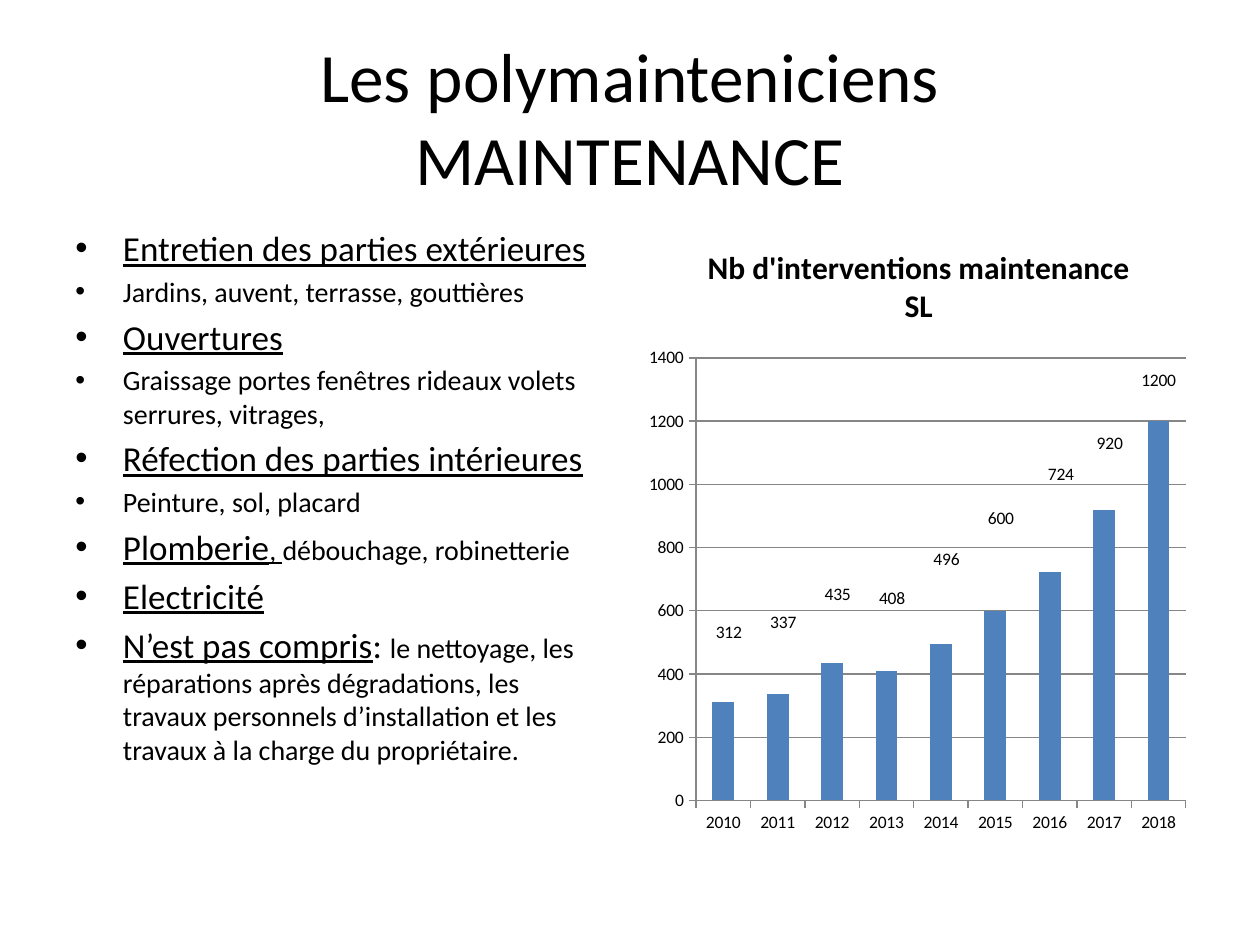
from lxml.etree import SubElement
from pptx import Presentation
from pptx.chart.data import CategoryChartData
from pptx.dml.color import RGBColor
from pptx.enum.chart import XL_CHART_TYPE, XL_TICK_MARK
from pptx.enum.text import MSO_ANCHOR, MSO_AUTO_SIZE, PP_ALIGN
from pptx.oxml import parse_xml
from pptx.oxml.ns import nsdecls, qn
from pptx.util import Cm, Pt

FONT = "Calibri"
BLACK = "000000"
GRID = "868686"
BAR = "4F81BD"
HEADING, DETAIL = 20, 16

TASKS = [
    [("Entretien des parties extérieures", HEADING, True)],
    [("Jardins, auvent, terrasse, gouttières", DETAIL, False)],
    [("Ouvertures", HEADING, True)],
    [("Graissage portes fenêtres rideaux volets serrures, vitrages,", DETAIL, False)],
    [("Réfection des parties intérieures", HEADING, True)],
    [("Peinture, sol, placard", DETAIL, False)],
    [("Plomberie", HEADING, True), (", ", DETAIL, True),
     ("débouchage, robinetterie", DETAIL, False)],
    [("Electricité", HEADING, True)],
    [("N’est pas compris", HEADING, True), (": ", HEADING, False),
     ("le nettoyage, les réparations après dégradations, les travaux personnels "
      "d’installation et les travaux à la charge du propriétaire.", DETAIL, False)],
]

INTERVENTIONS = {
    "2010": 312, "2011": 337, "2012": 435, "2013": 408, "2014": 496,
    "2015": 600, "2016": 724, "2017": 920, "2018": 1200,
}
LABEL_SHIFTS = [
    (0.01, -0.19), (0.01, -0.2), (0.01, -0.22), (0.01, -0.22), (0.01, -0.26),
    (0.01, -0.3), (0.02, -0.34), (0.01, -0.34), (0, -0.37),
]
LABEL_EXTENSION = (
    f'<c:extLst {nsdecls("c")}><c:ext uri="{{CE6537A1-D6FC-4f65-9D91-7224C49458BB}}" '
    'xmlns:c15="http://schemas.microsoft.com/office/drawing/2012/chart">'
    '<c15:showLeaderLines val="0"/></c:ext></c:extLst>'
)


def color(hex_value):
    return RGBColor.from_string(hex_value)


def style(font, size, bold=False, underline=False):
    font.name = FONT
    font.size = Pt(size)
    font.bold = bold
    font.underline = underline
    font.color.rgb = color(BLACK)


def write(paragraph, text, **formats):
    for number, line in enumerate(text.split("\n")):
        if number:
            paragraph.add_line_break()
        run = paragraph.add_run()
        run.text = line
        style(run.font, **formats)


def place(shape, box):
    shape.left, shape.top, shape.width, shape.height = box


def add_heading(slide, box):
    heading = slide.shapes.title
    place(heading, box)
    frame = heading.text_frame
    frame.auto_size = MSO_AUTO_SIZE.NONE
    frame.vertical_anchor = MSO_ANCHOR.MIDDLE
    frame.paragraphs[0].alignment = PP_ALIGN.CENTER
    write(frame.paragraphs[0], "Les polymainteniciens\nMAINTENANCE", size=39.6)


def add_bullet(paragraph):
    properties = paragraph._p.get_or_add_pPr()
    properties.set("marL", str(Cm(0.96)))
    properties.set("indent", str(-Cm(0.96)))
    SubElement(properties, qn("a:buFont"), typeface="Arial")
    SubElement(properties, qn("a:buChar"), char="•")


def add_tasks(slide, box):
    frame = slide.shapes.add_textbox(*box).text_frame
    frame.word_wrap = True
    for number, parts in enumerate(TASKS):
        paragraph = frame.add_paragraph() if number else frame.paragraphs[0]
        add_bullet(paragraph)
        if number:
            paragraph.space_before = Pt(parts[0][1] * 0.2)
        for text, size, underline in parts:
            write(paragraph, text, size=size, underline=underline)


def manual_layout(settings):
    items = "".join(f'<c:{key} val="{value}"/>' for key, value in settings.items())
    return parse_xml(f'<c:layout {nsdecls("c")}><c:manualLayout>{items}'
                     '</c:manualLayout></c:layout>')


def format_axis(axis):
    style(axis.tick_labels.font, 10)
    axis.major_tick_mark = XL_TICK_MARK.OUTSIDE
    axis.minor_tick_mark = XL_TICK_MARK.NONE
    axis.format.line.color.rgb = color(GRID)
    axis.format.line.width = Pt(0.75)


def label_bars(chart, bars):
    bars.data_labels.show_value = True
    for number in range(len(INTERVENTIONS)):
        style(bars.points[number].data_label.font, 10)
    for label, (x, y) in zip(chart.element.iter(qn("c:dLbl")), LABEL_SHIFTS):
        label.insert(1, manual_layout({"x": x, "y": y}))
    labels = next(chart.element.iter(qn("c:dLbls")))
    for leader in labels.findall(qn("c:showLeaderLines")):
        labels.remove(leader)
    SubElement(labels, qn("c:showLeaderLines"), val="0")
    labels.append(parse_xml(LABEL_EXTENSION))


def add_interventions(slide, box):
    name = "Nb d'interventions maintenance SL"
    data = CategoryChartData()
    data.categories = list(INTERVENTIONS)
    data.add_series(name, list(INTERVENTIONS.values()))
    chart = slide.shapes.add_chart(XL_CHART_TYPE.COLUMN_STACKED, *box, data).chart
    style(chart.font, 10)
    chart.has_legend = False
    chart.has_title = True
    caption = chart.chart_title.text_frame.paragraphs[0]
    write(caption, name, size=18, bold=True)

    for axis in (chart.category_axis, chart.value_axis):
        format_axis(axis)
    scale = chart.value_axis
    scale.minimum_scale, scale.maximum_scale, scale.major_unit = 0, 1400, 200
    scale.has_major_gridlines = True
    scale.major_gridlines.format.line.color.rgb = color(GRID)
    scale.major_gridlines.format.line.width = Pt(0.75)

    plot = chart.plots[0]
    plot.vary_by_categories = False
    plot.gap_width, plot.overlap = 150, 100
    bars = plot.series[0]
    bars.format.fill.solid()
    bars.format.fill.fore_color.rgb = color(BAR)
    label_bars(chart, bars)

    area = next(chart.element.iter(qn("c:plotArea")))
    for layout in area.findall(qn("c:layout")):
        area.remove(layout)
    area.insert(0, manual_layout({
        "layoutTarget": "inner", "xMode": "edge", "yMode": "edge",
        "x": 0.1, "y": 0.22, "w": 0.88, "h": 0.71,
    }))


def main():
    presentation = Presentation()
    presentation.slide_width, presentation.slide_height = Cm(25.4), Cm(19.05)
    slide = presentation.slides.add_slide(presentation.slide_layouts[5])
    margin, top, gap, height = Cm(1.27), Cm(4.45), Cm(0.42), Cm(12.57)
    width = presentation.slide_width - 2 * margin
    column = (width - gap) // 2
    add_heading(slide, (margin, Cm(0.76), width, Cm(3.18)))
    add_tasks(slide, (margin, top, column, height))
    add_interventions(slide, (margin + column + gap, top, column, height))
    presentation.save("out.pptx")


if __name__ == "__main__":
    main()
